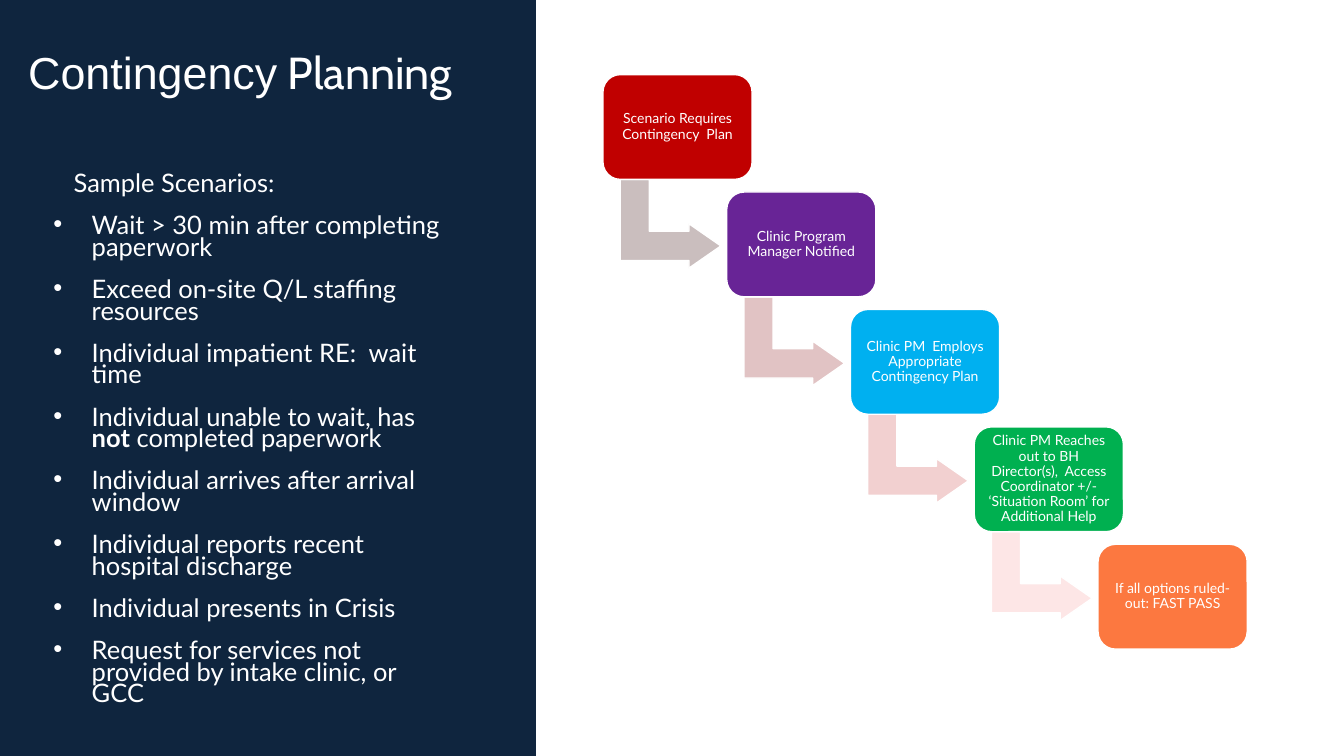
from dataclasses import dataclass

import lxml.etree
import pptx
import pptx.dml.color
import pptx.enum.shapes
import pptx.enum.text
import pptx.oxml.ns
import pptx.util

Inches = pptx.util.Inches
Pt = pptx.util.Pt
SHAPE = pptx.enum.shapes.MSO_SHAPE
ALIGN = pptx.enum.text.PP_ALIGN
ANCHOR = pptx.enum.text.MSO_ANCHOR


@dataclass
class Theme:
    navy: str = "0F253E"
    white: str = "FFFFFF"
    title_font: str = "Arial"
    accent_font: str = "Cabin"
    body_font: str = "Lato"
    title_size: float = 32
    body_size: float = 18.2
    step_size: float = 10
    step_colors: tuple = ("C00000", "682496", "00B0F0", "00B050", "FC7840")
    arrow_colors: tuple = ("CABEBE", "E1C3C4", "F2D0D0", "FDE6E6")


SCENARIOS = [
    ["Wait > 30 min after completing paperwork"],
    ["Exceed on-site Q/L staffing resources"],
    ["Individual impatient RE:  wait time"],
    ["Individual unable to wait, has ", "not", " completed paperwork"],
    ["Individual arrives after arrival window"],
    ["Individual reports recent hospital discharge"],
    ["Individual presents in Crisis"],
    ["Request for services not provided by intake clinic, or GCC"],
]

STEPS = [
    "Scenario Requires Contingency  Plan",
    "Clinic Program Manager Notified",
    "Clinic PM  Employs Appropriate Contingency Plan",
    "Clinic PM Reaches out to BH Director(s),  Access Coordinator "
    "+/- ‘Situation Room’ for Additional Help",
    "If all options ruled-out: FAST PASS",
]


class Deck:
    def __init__(self, prs, theme):
        self.theme = theme
        self.slide = prs.slides.add_slide(prs.slide_layouts[1])
        fill = self.slide.background.fill
        fill.solid()
        fill.fore_color.rgb = self.rgb(theme.navy)

    def rgb(self, color):
        return pptx.dml.color.RGBColor.from_string(color)

    def font(self, r, name, size, bold=False):
        r.font.name = name
        r.font.size = Pt(size)
        r.font.bold = bold
        r.font.color.rgb = self.rgb(self.theme.white)

    def frame(self, sp, margin_x, margin_y, anchor):
        tf = sp.text_frame
        tf.word_wrap = True
        tf.auto_size = pptx.enum.text.MSO_AUTO_SIZE.NONE
        tf.vertical_anchor = anchor
        tf.margin_left = tf.margin_right = Inches(margin_x)
        tf.margin_top = tf.margin_bottom = Inches(margin_y)
        return tf

    def place(self, sp, left, top, width, height):
        sp.left, sp.top = Inches(left), Inches(top)
        sp.width, sp.height = Inches(width), Inches(height)

    def shape(self, kind, left, top, width, height, color):
        sp = self.slide.shapes.add_shape(
            kind, Inches(left), Inches(top), Inches(width), Inches(height))
        sp.shadow.inherit = False
        sp.fill.solid()
        sp.fill.fore_color.rgb = self.rgb(color)
        sp.line.color.rgb = self.rgb(self.theme.white)
        sp.line.width = Pt(1)
        return sp

    def title(self, parts, *box):
        sp = self.slide.shapes.title
        self.place(sp, *box)
        p = self.frame(sp, 0.13, 0.13, ANCHOR.TOP).paragraphs[0]
        p.alignment = ALIGN.LEFT
        for text, name in parts:
            r = p.add_run()
            r.text = text
            self.font(r, name, self.theme.title_size)

    def bullet(self, p, char, left, indent):
        pPr = p._p.get_or_add_pPr()
        pPr.set("marL", str(Inches(left)))
        pPr.set("indent", str(Inches(indent)))
        qn = pptx.oxml.ns.qn
        if char:
            lxml.etree.SubElement(pPr, qn("a:buFont")).set("typeface", self.theme.title_font)
            lxml.etree.SubElement(pPr, qn("a:buChar")).set("char", char)
        else:
            lxml.etree.SubElement(pPr, qn("a:buNone"))

    def body(self, heading, items, *box):
        sp = self.slide.placeholders[1]
        self.place(sp, *box)
        tf = self.frame(sp, 0.1, 0.05, ANCHOR.TOP)
        for i, parts in enumerate([[heading]] + items):
            p = tf.add_paragraph() if i else tf.paragraphs[0]
            if i:
                self.bullet(p, "•", 0.38, -0.38)
            else:
                self.bullet(p, None, 0.2, 0)
            p.line_spacing = 0.7
            p.space_before = Pt(15 if i else 0)
            p.alignment = ALIGN.LEFT
            for j, text in enumerate(parts):
                r = p.add_run()
                r.text = text
                self.font(r, self.theme.body_font, self.theme.body_size, j == 1)

    def arrow(self, left, top, color):
        sp = self.shape(SHAPE.BENT_UP_ARROW, left, top, 0.88, 1, color)
        sp.rotation = 90
        for i, value in enumerate((0.33, 0.25, 0.36)):
            sp.adjustments[i] = value

    def step(self, text, left, top, color):
        sp = self.shape(SHAPE.ROUNDED_RECTANGLE, left, top, 1.48, 1.04, color)
        tf = self.frame(sp, 0.08, 0.08, ANCHOR.MIDDLE)
        tf.text = text
        p = tf.paragraphs[0]
        p.alignment = ALIGN.CENTER
        p.line_spacing = 0.9
        self.font(p.runs[0], self.theme.body_font, self.theme.step_size)

    def staircase(self, steps, first, last):
        count = len(steps) - 1
        dx, dy = ((b - a) / count for a, b in zip(first, last))
        for i, text in enumerate(steps):
            left, top = first[0] + i * dx, first[1] + i * dy
            if i < count:
                self.arrow(left + 0.23, top + 0.98, self.theme.arrow_colors[i])
            self.step(text, left, top, self.theme.step_colors[i])


def main():
    prs = pptx.Presentation()
    prs.slide_width, prs.slide_height = Inches(13.33), Inches(7.5)
    theme = Theme()
    deck = Deck(prs, theme)
    deck.shape(SHAPE.RECTANGLE, 5.32, 0, 8.01, 7.5, theme.white)
    deck.title([("Contingency", theme.title_font), (" Planning", theme.accent_font)],
               0.15, 0.31, 5.11, 0.96)
    deck.body("Sample Scenarios:", SCENARIOS, 0.43, 1.69, 4.18, 5.5)
    deck.staircase(STEPS, (5.98, 0.74), (10.89, 5.4))
    prs.save("out.pptx")


if __name__ == "__main__":
    main()
